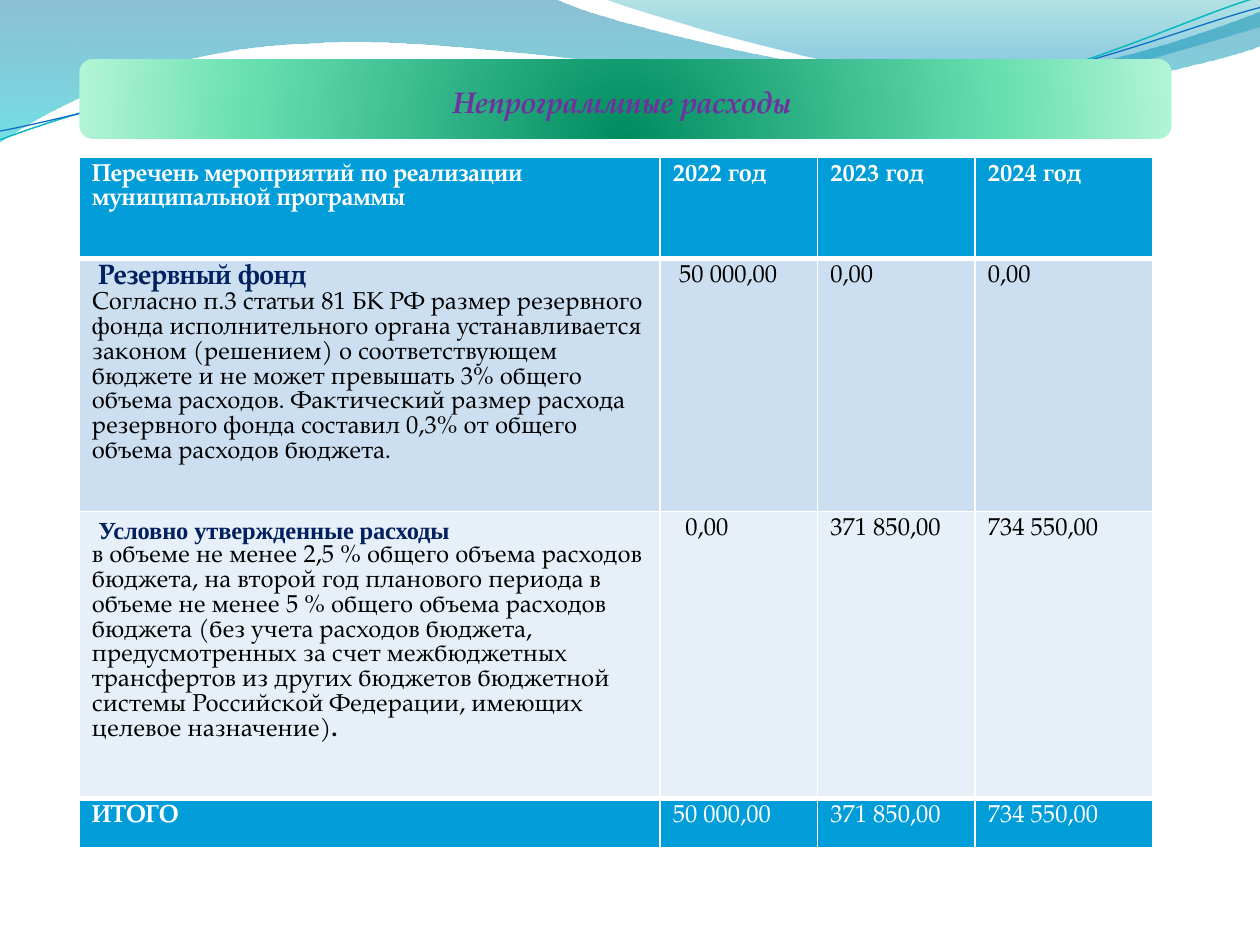
from lxml import etree
from pptx import Presentation
from pptx.dml.color import RGBColor
from pptx.enum import shapes, text
from pptx.oxml import parse_xml
from pptx.oxml.ns import nsdecls, qn
from pptx.util import Inches, Pt

FONT = "TeX Gyre Pagella"
WHITE, BLACK, NAVY, BLUE = "FFFFFF", "000000", "002060", "009DD9"
UNITS = 1000

WAVES = [
    ((0, 0),
     [(4.4, -0.01), (4.76, 0.17, 6.64, 0.63, 7.58, 0.63),
      (8.53, 0.63, 9.58, 0.26, 10, 0.09), (10.01, 0.36),
      (9.83, 0.44, 8.7, 0.76, 7.46, 0.75), (6.22, 0.75, 3.82, 0.28, 2.57, 0.34),
      (1.29, 0.36, 0.46, 0.83, -0.01, 1.13)],
     [(0, "0074A1", 45), (100, "00C6CF", 55)]),
    ((4.79, -0.01),
     [(5.09, 0.11, 6.82, 0.62, 7.69, 0.65), (8.56, 0.69, 9.61, 0.32, 10, 0.21), (10, 0)],
     [(0, "00A1A9", 30), (80, "008BBF", 45)]),
]
STRANDS = [
    ((0, 1.11),
     [(0.48, 0.93, 1.58, 0.57, 2.77, 0.52), (3.95, 0.47, 5.93, 0.89, 7.13, 0.8),
      (8.33, 0.71, 9.38, 0.15, 9.98, -0.02)], "0AB8BF", 0.85),
    ((0, 1.04),
     [(0.47, 0.96, 1.64, 0.61, 2.83, 0.56), (4.03, 0.51, 5.97, 0.84, 7.17, 0.75),
      (8.36, 0.67, 9.41, 0.21, 10, 0.06)], "0F6FC6", 0.75),
]

RESERVE = ("Согласно п.3 статьи 81 БК РФ размер резервного фонда исполнительного органа "
           "устанавливается законом (решением) о соответствующем бюджете и не может превышать "
           "3% общего объема расходов. Фактический размер расхода резервного фонда составил "
           "0,3% от общего объема расходов бюджета.")
CONDITIONAL = ("в объеме не менее 2,5 % общего объема расходов бюджета, на второй год планового "
               "периода в объеме не менее 5 % общего объема расходов бюджета (без учета расходов "
               "бюджета, предусмотренных за счет межбюджетных трансфертов из других бюджетов "
               "бюджетной системы Российской Федерации, имеющих целевое назначение)")


def rgb(color):
    return RGBColor.from_string(color)


def style(font, size=14, color=BLACK, bold=False, italic=False, name=FONT):
    font.size, font.bold, font.italic, font.name = Pt(size), bold, italic, name
    font.color.rgb = rgb(color)


def gradient(sp, stops, direction):
    gs = "".join(
        f'<a:gs pos="{pos * 1000}"><a:srgbClr val="{color}">'
        f'<a:alpha val="{alpha * 1000}"/></a:srgbClr></a:gs>'
        for pos, color, alpha in stops)
    sp.fill.background()
    old = sp._element.spPr.find(qn("a:noFill"))
    old.getparent().replace(old, parse_xml(
        f'<a:gradFill {nsdecls("a")} rotWithShape="1">'
        f'<a:gsLst>{gs}</a:gsLst>{direction}</a:gradFill>'))


def add_curve(s, left, top, start, segments, close):
    anchors = [start] + [seg[-2:] for seg in segments]
    points = [(round(x * UNITS), round(y * UNITS)) for x, y in anchors]
    builder = s.shapes.build_freeform(*points[0], scale=Inches(1) / UNITS)
    builder.add_line_segments(points[1:], close=close)
    sp = builder.convert_to_shape(left, top)
    origin = [min(axis) for axis in zip(*points)]
    lines = list(sp._element.spPr.iter(qn("a:lnTo")))
    for line, seg in zip(lines, segments):
        if len(seg) == 6:
            bend = etree.Element(qn("a:cubicBezTo"))
            for x, y in zip(seg[::2], seg[1::2]):
                etree.SubElement(bend, qn("a:pt"), x=str(round(x * UNITS) - origin[0]),
                                 y=str(round(y * UNITS) - origin[1]))
            line.getparent().replace(line, bend)
    sp.shadow.inherit = False
    return sp


def add_waves(s, left, top):
    for start, segments, stops in WAVES:
        sp = add_curve(s, left, top, start, segments, True)
        gradient(sp, stops, '<a:lin ang="5400000" scaled="0"/>')
        sp.line.fill.background()
    for start, segments, color, width in STRANDS:
        sp = add_curve(s, left, top, start, segments, False)
        sp.fill.background()
        sp.line.color.rgb, sp.line.width = rgb(color), Pt(width)


def add_title(s, left, top, width, height):
    sp = s.shapes.add_shape(shapes.MSO_SHAPE.ROUNDED_RECTANGLE, left, top, width, height)
    gradient(sp, [(0, "008C60", 100), (68, "65DEB0", 100), (100, "B2F4D6", 100)],
             '<a:path path="circle"><a:fillToRect l="50000" t="130000" r="50000" b="-30000"/>'
             '</a:path>')
    sp.line.fill.background()
    sp.shadow.inherit = False
    tf = sp.text_frame
    tf.vertical_anchor = text.MSO_ANCHOR.MIDDLE
    tf.margin_top, tf.margin_right = Inches(0.1), Inches(0.16)
    p = tf.paragraphs[0]
    p.text = "Непрограммные расходы"
    p.alignment = text.PP_ALIGN.CENTER
    style(p.font, 17, "7030A0", True, True)


def add_text(p, words, indent=0, spacing=0, **look):
    p._p.get_or_add_pPr().set("marL", str(Inches(indent)))
    p.text = words
    style(p.font, **look)
    if spacing:
        p.runs[0]._r.get_or_add_rPr().set("spc", str(round(spacing * 100)))


def add_item(tf, heading, body, end="", **look):
    add_text(tf.paragraphs[0], heading, 0.05, color=NAVY, bold=True, **look)
    p = tf.add_paragraph()
    if not end:
        add_text(p, body)
        return
    for words, bold in ((body, False), (end, True)):
        r = p.add_run()
        r.text = words
        style(r.font, bold=bold)


def paint_cell(cell, fill, top, bottom):
    cell.fill.solid()
    cell.fill.fore_color.rgb = rgb(fill)
    tcPr = cell._tc.get_or_add_tcPr()
    for i, (side, width) in enumerate(zip("LRTB", (1, 1, top, bottom))):
        tcPr.insert(i, parse_xml(
            f'<a:ln{side} {nsdecls("a")} w="{Pt(width)}"><a:solidFill>'
            f'<a:srgbClr val="{WHITE}"/></a:solidFill></a:ln{side}>'))


def add_budget(s, left, top, width, height):
    rows = [("Перечень мероприятий по реализации муниципальной программы",
             "2022 год", "2023 год", "2024 год"),
            ("", "50 000,00", "0,00", "0,00"),
            ("", "0,00", "371 850,00", "734 550,00"),
            ("ИТОГО", "50 000,00", "371 850,00", "734 550,00")]
    fills = [BLUE, "CCDFF1", "E7EFF8", BLUE]
    borders = [1, 3, 1, 3, 1]
    indents = {(1, 1): 0.05, (2, 1): 0.1}
    table = s.shapes.add_table(4, 4, left, top, width, height).table
    table.first_row = table.horz_banding = False
    for column, size in zip(table.columns, (4.61, 1.25, 1.25, 1.41)):
        column.width = Inches(size)
    for row, size in zip(table.rows, (0.8, 2.01, 2.28, 0.39)):
        row.height = Inches(size)
    for i, values in enumerate(rows):
        for j, value in enumerate(values):
            cell = table.cell(i, j)
            paint_cell(cell, fills[i], borders[i], borders[i + 1])
            if value:
                add_text(cell.text_frame.paragraphs[0], value, indents.get((i, j), 0),
                         color=WHITE if fills[i] == BLUE else BLACK,
                         bold=i == 0 or (i == 3 and j == 0))
    add_item(table.cell(1, 0).text_frame, "Резервный фонд", RESERVE, size=16)
    add_item(table.cell(2, 0).text_frame, "Условно утвержденные расходы", CONDITIONAL, ".",
             name="Times New Roman", spacing=-0.1)


def main():
    prs = Presentation()
    prs.slide_width, prs.slide_height = Inches(10), Inches(7.5)
    s = prs.slides.add_slide(prs.slide_layouts[6])
    add_waves(s, 0, 0)
    add_title(s, Inches(0.63), Inches(0.47), Inches(8.67), Inches(0.63))
    add_budget(s, Inches(0.63), Inches(1.25), Inches(8.52), Inches(5.48))
    prs.save("out.pptx")


if __name__ == "__main__":
    main()
